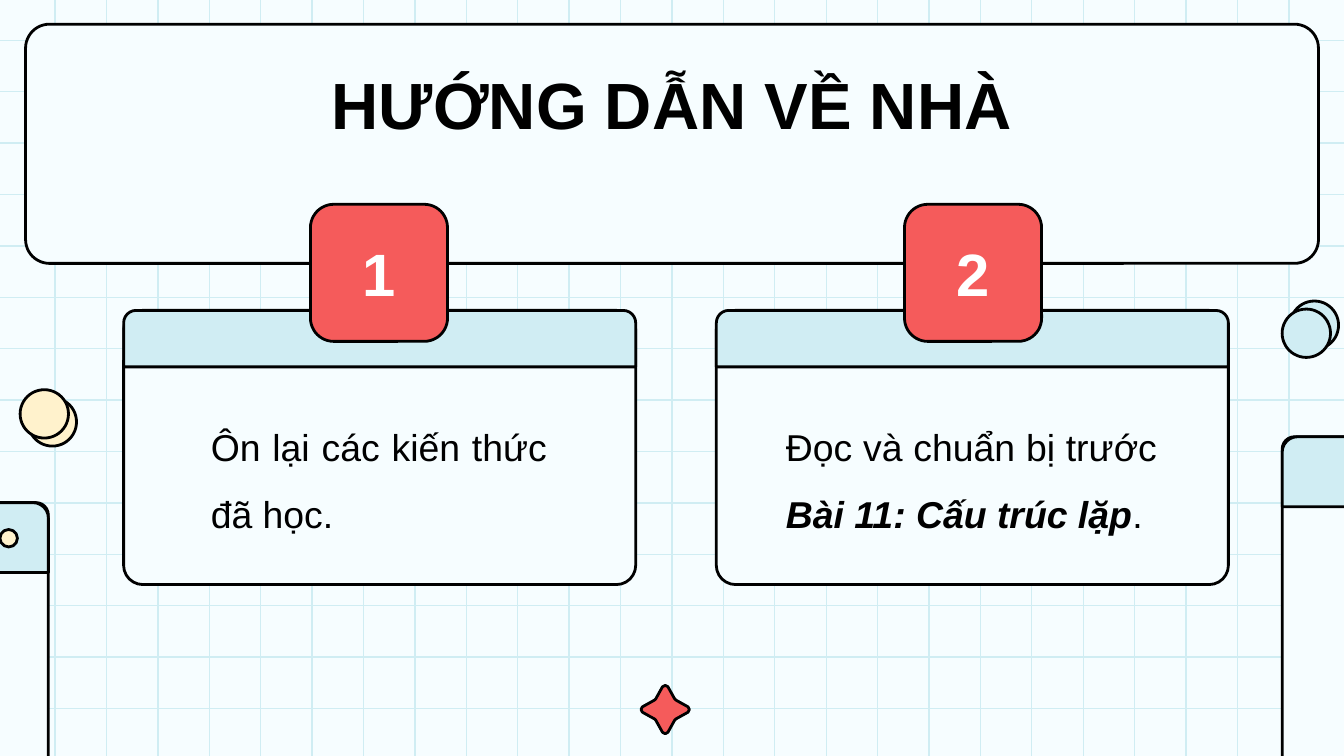
from dataclasses import dataclass

from lxml.etree import SubElement
from pptx import Presentation
from pptx.dml.color import RGBColor
from pptx.enum.shapes import MSO_CONNECTOR, MSO_SHAPE
from pptx.enum.text import MSO_ANCHOR, MSO_AUTO_SIZE, PP_ALIGN
from pptx.oxml.ns import qn
from pptx.util import Inches, Pt

WIDTH = 10
HEIGHT = WIDTH * 9 / 16
PAPER, SKY, CREAM, CORAL = "F6FDFF", "D0EDF3", "FFF2CC", "F55B5B"
BLACK, WHITE = "000000", "FFFFFF"


@dataclass
class Window:
    left: float
    top: float
    width: float
    height: float
    bar_height: float
    corner: float


@dataclass
class Task:
    number: str
    window: Window
    badge_left: float
    text_box: tuple[float, float, float, float]
    runs: list[tuple[str, dict]]


@dataclass
class Coin:
    left: float
    top: float
    size: float
    color: str


def rgb(color: str) -> RGBColor:
    return RGBColor.from_string(color)


def paint(shape, fill: str) -> None:
    shape.shadow.inherit = False
    shape.fill.solid()
    shape.fill.fore_color.rgb = rgb(fill)
    shape.line.color.rgb = rgb(BLACK)
    shape.line.width = Pt(1.5)


def add_outlined(slide, kind, box: tuple, fill: str, corners: tuple = ()):
    shape = slide.shapes.add_shape(kind, *map(Inches, box))
    paint(shape, fill)
    for index, corner in enumerate(corners):
        shape.adjustments[index] = corner
    return shape


def add_grid_line(slide, start: tuple, end: tuple) -> None:
    line = slide.shapes.add_connector(
        MSO_CONNECTOR.STRAIGHT, *map(Inches, start + end))
    line.line.color.rgb = rgb(SKY)
    line.line.width = Pt(0.75)
    SubElement(line._element.spPr, qn("a:effectLst"))


def add_window(slide, window: Window) -> None:
    left, top, width = window.left, window.top, window.width
    add_outlined(slide, MSO_SHAPE.ROUNDED_RECTANGLE,
                 (left, top, width, window.height), PAPER, (window.corner,))
    add_outlined(slide, MSO_SHAPE.ROUND_2_SAME_RECTANGLE,
                 (left, top, width, window.bar_height), SKY, (0.22, 0))


def add_coin(slide, coin: Coin) -> None:
    add_outlined(slide, MSO_SHAPE.OVAL,
                 (coin.left, coin.top, coin.size, coin.size), coin.color)


def add_star(slide, center_x: float, center_y: float) -> None:
    arm = [(0, -0.18), (0.02, -0.17), (0.07, -0.08), (0.08, -0.07), (0.17, -0.02)]
    outline = []
    for _ in range(4):
        outline += arm
        arm = [(-y, x) for x, y in arm]  # quarter turn
    points = [(Inches(center_x + x), Inches(center_y + y)) for x, y in outline]
    builder = slide.shapes.build_freeform(*points[0])
    builder.add_line_segments(points[1:], close=True)
    paint(builder.convert_to_shape(), CORAL)


def write(paragraph, runs: list, size: int, color: str, align) -> None:
    paragraph.alignment = align
    for text, style in runs:
        run = paragraph.add_run()
        run.text = text
        formats = {"name": "Arial", "size": Pt(size)} | style
        for name, value in formats.items():
            setattr(run.font, name, value)
        run.font.color.rgb = rgb(color)


def add_text(slide, box: tuple, runs: list, size: int, align, spacing: float = 1.0) -> None:
    frame = slide.shapes.add_textbox(*map(Inches, box)).text_frame
    frame.word_wrap = True
    frame.auto_size = MSO_AUTO_SIZE.SHAPE_TO_FIT_TEXT
    paragraph = frame.paragraphs[0]
    paragraph.line_spacing = spacing
    write(paragraph, runs, size, BLACK, align)


def add_badge(slide, task: Task) -> None:
    badge = add_outlined(slide, MSO_SHAPE.ROUNDED_RECTANGLE,
                         (task.badge_left, 1.52, 1.02, 1.02), CORAL, (0.17,))
    frame = badge.text_frame
    margins = ("margin_left", "margin_top", "margin_right", "margin_bottom")
    frame_formats = dict.fromkeys(margins, Inches(0.1))
    frame_formats["vertical_anchor"] = MSO_ANCHOR.MIDDLE
    for name, value in frame_formats.items():
        setattr(frame, name, value)
    write(frame.paragraphs[0], [(task.number, {"bold": True})], 32, WHITE, PP_ALIGN.CENTER)


TASKS = [
    Task("1", Window(0.92, 2.31, 3.81, 2.04, 0.42, 0.07), 2.31, (1.47, 2.94, 2.7, 1.11),
         [("Ôn lại các kiến thức đã học.", {})]),
    Task("2", Window(5.33, 2.31, 3.81, 2.04, 0.42, 0.07), 6.73, (5.75, 2.94, 2.96, 1.11),
         [("Đọc và chuẩn bị trước ", {}),
          ("Bài 11: Cấu trúc lặp", {"bold": True, "italic": True}),
          (".", {})]),
]
SIDE_WINDOWS = [
    Window(9.54, 3.25, 6.78, 3.06, 0.52, 0.03),
    Window(-6.42, 3.74, 6.78, 3.06, 0.52, 0.03),
]
COINS = [
    Coin(0, 3.94, 0.13, CREAM),
    Coin(0.21, 2.96, 0.36, CREAM),
    Coin(0.15, 2.9, 0.36, CREAM),
    Coin(9.6, 2.24, 0.36, SKY),
    Coin(9.54, 2.3, 0.36, SKY),
]


def main() -> None:
    deck = Presentation()
    deck.slide_width, deck.slide_height = Inches(WIDTH), Inches(HEIGHT)
    slide = deck.slides.add_slide(deck.slide_layouts[6])
    slide.background.fill.solid()
    slide.background.fill.fore_color.rgb = rgb(PAPER)

    # Squared paper
    first_x, last_x, columns = 0.41, 9.59, 25
    cell = (last_x - first_x) / (columns - 1)
    for column in range(columns):
        x = first_x + column * cell
        add_grid_line(slide, (x, 0), (x, HEIGHT))
    for row in range(14):
        y = 0.3 + row * cell
        add_grid_line(slide, (0, y), (WIDTH, y))

    # Title panel and decorations
    add_outlined(slide, MSO_SHAPE.ROUNDED_RECTANGLE, (0.19, 0.18, 9.62, 1.78), PAPER, (0.1,))
    for window in SIDE_WINDOWS:
        add_window(slide, window)
    for coin in COINS:
        add_coin(slide, coin)
    add_star(slide, 4.95, 5.28)

    # Homework cards with numbered badges
    for task in TASKS:
        add_window(slide, task.window)
        add_badge(slide, task)

    # Title and task wording
    add_text(slide, (0, 0.43, WIDTH, 0.69), [("HƯỚNG DẪN VỀ NHÀ", {"bold": True})],
             35, PP_ALIGN.CENTER)
    for task in TASKS:
        add_text(slide, task.text_box, task.runs, 20, PP_ALIGN.JUSTIFY, 1.5)

    deck.save("out.pptx")


if __name__ == "__main__":
    main()
